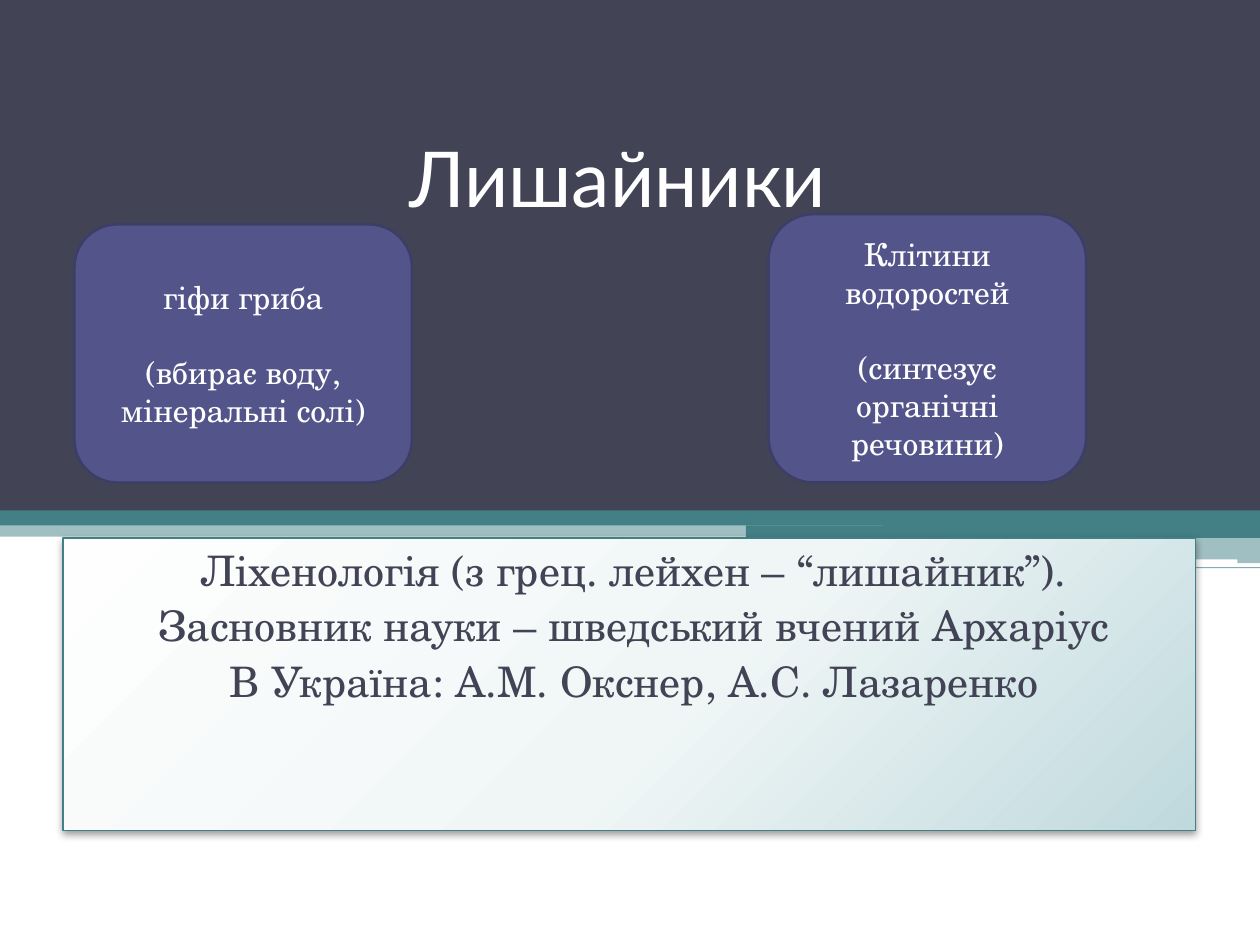
from dataclasses import dataclass

from lxml import etree
from pptx import Presentation
from pptx.dml.color import RGBColor
from pptx.enum.shapes import MSO_SHAPE
from pptx.enum.text import MSO_ANCHOR, PP_ALIGN
from pptx.oxml import parse_xml
from pptx.oxml.ns import qn
from pptx.util import Inches, Pt

RECT = MSO_SHAPE.RECTANGLE
ROUNDED = MSO_SHAPE.ROUNDED_RECTANGLE
CENTER = PP_ALIGN.CENTER
TOP, MIDDLE, BOTTOM = MSO_ANCHOR.TOP, MSO_ANCHOR.MIDDLE, MSO_ANCHOR.BOTTOM

WHITE = RGBColor(0xFF, 0xFF, 0xFF)
TEAL = RGBColor(0x43, 0x80, 0x86)
SLATE = RGBColor(0x42, 0x44, 0x56)
VIOLET = RGBColor(0x53, 0x54, 0x8A)
DARK_VIOLET = RGBColor(0x3D, 0x3E, 0x66)

TITLE_FONT = "Lato"
BODY_FONT = "TeX Gyre Schola"
DRAWING_NS = 'xmlns:a="http://schemas.openxmlformats.org/drawingml/2006/main"'
PANEL_STOPS = ((0, "FEFEFE"), (55, "F0F6F6"), (100, "BFD9DD"))


@dataclass(frozen=True)
class Box:
    left: float
    top: float
    width: float
    height: float

    def lengths(self) -> tuple:
        return tuple(Inches(v) for v in (self.left, self.top, self.width, self.height))


@dataclass(frozen=True)
class Bar:
    box: Box
    color: RGBColor = TEAL
    opacity: int = 100
    preset: MSO_SHAPE = RECT


@dataclass(frozen=True)
class Partner:
    """One of the two organisms that make up a lichen."""
    box: Box
    name: str
    role: str


BARS = (
    Bar(Box(5.92, 4.17, 4.08, 0.1)),
    Bar(Box(5.92, 4.26, 4.08, 0.21), opacity=50),
    Bar(Box(5.92, 4.5, 4.08, 0.01), opacity=65),
    Bar(Box(5.92, 4.55, 2.15, 0.02), opacity=60),
    Bar(Box(5.92, 4.59, 2.15, 0.01), opacity=65),
    Bar(Box(5.92, 4.33, 3.35, 0.03), WHITE, preset=ROUNDED),
    Bar(Box(8.07, 4.44, 1.75, 0.04), WHITE, preset=ROUNDED),
    Bar(Box(0, 3.99, 10, 0.27), opacity=50),
    Bar(Box(0, 4.02, 10, 0.15)),
    Bar(Box(7.01, 3.98, 2.99, 0.27)),
    Bar(Box(0, 0, 10, 4.05), SLATE),
)
PARTNERS = (
    Partner(Box(0.59, 1.78, 2.68, 2.05), "гіфи гриба", "(вбирає воду, мінеральні солі)"),
    Partner(Box(6.1, 1.7, 2.52, 2.13), "Клітини водоростей", "(синтезує органічні речовини)"),
)
SCIENCE_LINES = (
    "Ліхенологія (з грец. лейхен – “лишайник”).",
    "Засновник науки – шведський вчений Архаріус",
    "В Україна: А.М. Окснер, А.С. Лазаренко",
)


def add_bar(page, bar: Bar):
    shape = page.shapes.add_shape(bar.preset, *bar.box.lengths())
    shape.shadow.inherit = False
    shape.fill.solid()
    shape.fill.fore_color.rgb = bar.color
    shape.line.fill.background()
    if bar.opacity < 100:
        color = shape.fill._xPr.find(".//" + qn("a:srgbClr"))
        etree.SubElement(color, qn("a:alpha"), val=str(bar.opacity * 1000))
    return shape


def outline(shape, color: RGBColor, width: float) -> None:
    shape.line.color.rgb = color
    shape.line.width = Pt(width)


def write_text(shape, lines, *, font: str, size: float, color: RGBColor,
               anchor=TOP, first_gap: float = 0, gap: float = 0, margin: float = 0) -> None:
    """Fill a shape with centred paragraphs; gaps are points, margin is inches."""
    frame = shape.text_frame
    frame.word_wrap = True
    frame.vertical_anchor = anchor
    for index, line in enumerate(lines):
        para = frame.add_paragraph() if index else frame.paragraphs[0]
        para.alignment = CENTER
        para.space_before = Pt(gap if index else first_gap)
        if margin:
            para._p.get_or_add_pPr().set("marL", str(Inches(margin)))
        span = para.add_run()
        span.text = line
        span.font.name = font
        span.font.size = Pt(size)
        span.font.color.rgb = color


def add_panel(page, box: Box):
    """Add the shaded panel with a radial gradient and a soft shadow."""
    panel = add_bar(page, Bar(box, WHITE))
    outline(panel, TEAL, 0.75)
    properties = panel._element.spPr
    stops = "".join(
        f'<a:gs pos="{position * 1000}"><a:srgbClr val="{color}"/></a:gs>'
        for position, color in PANEL_STOPS)
    gradient = parse_xml(
        f'<a:gradFill {DRAWING_NS} rotWithShape="1"><a:gsLst>{stops}</a:gsLst>'
        '<a:path path="circle"><a:fillToRect l="-40000" t="-90000" r="140000" b="190000"/>'
        '</a:path></a:gradFill>')
    properties.replace(properties.find(qn("a:solidFill")), gradient)
    shadow = parse_xml(
        f'<a:outerShdw {DRAWING_NS} blurRad="{Pt(4.1)}" dist="{Pt(2)}" dir="5400000" '
        'rotWithShape="0"><a:srgbClr val="000000"><a:alpha val="40000"/></a:srgbClr>'
        '</a:outerShdw>')
    properties.find(qn("a:effectLst")).append(shadow)
    return panel


def add_partner(page, partner: Partner) -> None:
    card = add_bar(page, Bar(partner.box, VIOLET, preset=ROUNDED))
    outline(card, DARK_VIOLET, 1.5)
    write_text(card, (partner.name, partner.role), font=BODY_FONT, size=18,
               color=WHITE, anchor=MIDDLE, gap=21.5)


def main() -> None:
    deck = Presentation()
    deck.slide_width, deck.slide_height = Inches(10), Inches(7.5)
    page = deck.slides.add_slide(deck.slide_layouts[6])

    for bar in BARS:
        add_bar(page, bar)

    title = page.shapes.add_textbox(*Box(0.28, 0.21, 9.25, 1.61).lengths())
    write_text(title, ("Лишайники",), font=TITLE_FONT, size=44, color=WHITE, anchor=BOTTOM)

    panel = add_panel(page, Box(0.5, 4.27, 8.99, 2.32))
    write_text(panel, SCIENCE_LINES, font=BODY_FONT, size=24, color=SLATE,
               first_gap=3, gap=3, margin=0.07)

    for partner in PARTNERS:
        add_partner(page, partner)

    deck.save("out.pptx")


if __name__ == "__main__":
    main()
